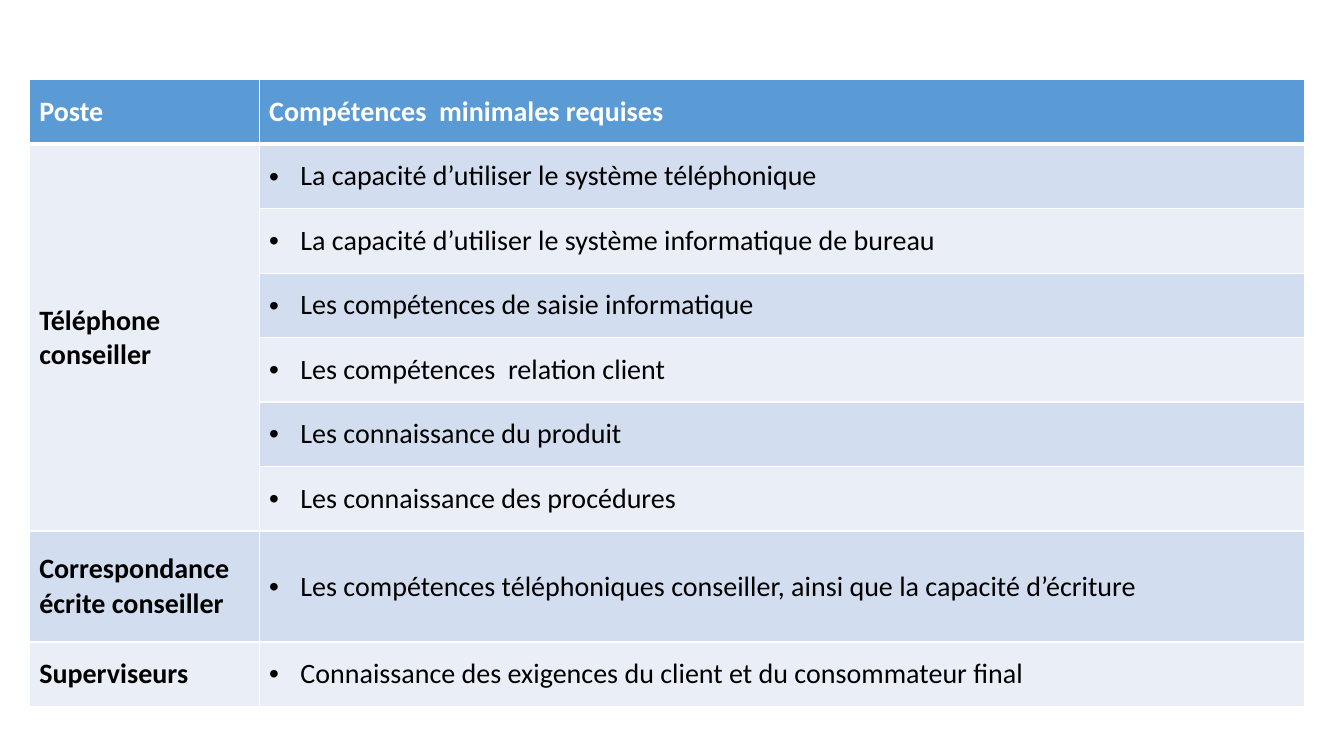
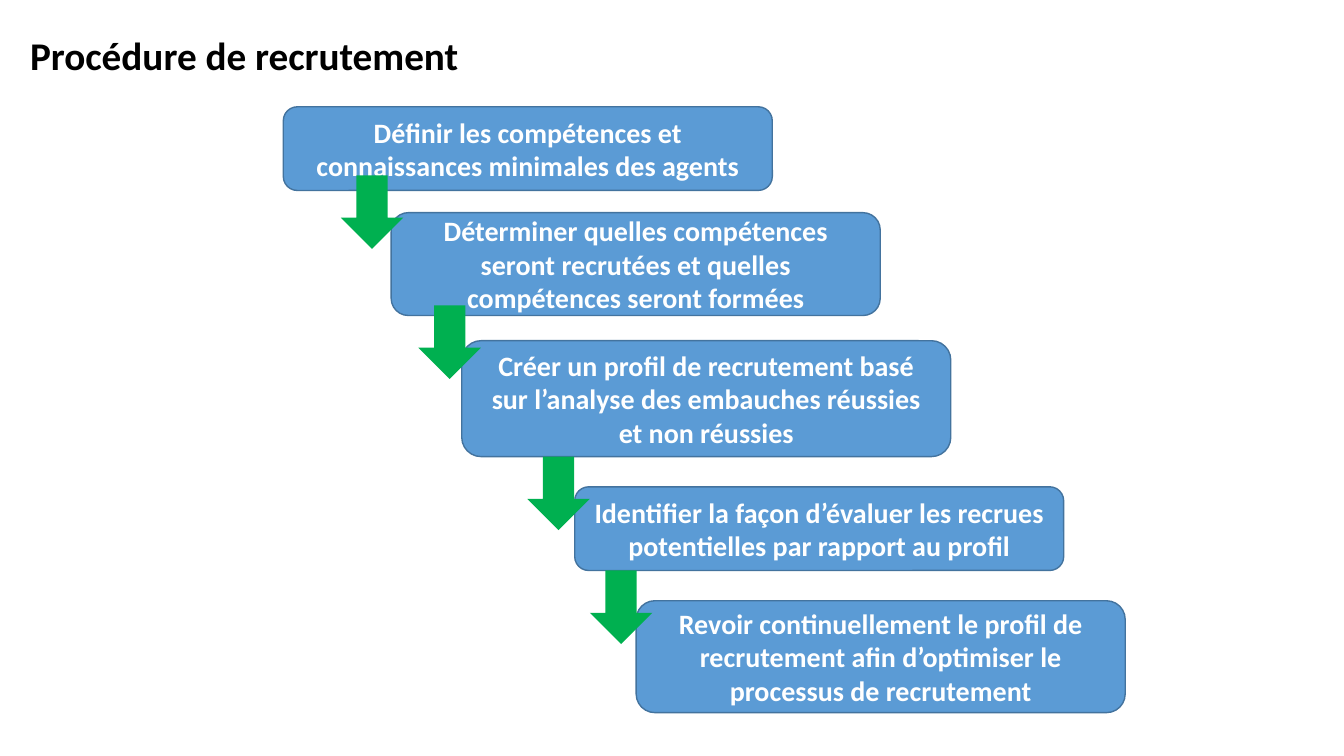
from lxml import etree
from pptx import Presentation
from pptx import util as u
from pptx.dml import color
from pptx.enum import shapes, text
from pptx.oxml import ns

COLORS = {
    "blue": "5B9BD5", "outline": "43739E", "green": "00B050",
    "band_dark": "D2DEEF", "band_light": "EAEFF7",
    "white": "FFFFFF", "black": "000000",
}
TITLE = {"name": "Calibri", "size": u.Pt(28), "bold": True}
STRONG = {"name": "Calibri", "size": u.Pt(20), "bold": True}
BODY = {**STRONG, "bold": False}

# Each post with its required skills
POSTS = [
    ("Téléphone conseiller", [
        "La capacité d’utiliser le système téléphonique",
        "La capacité d’utiliser le système informatique de bureau",
        "Les compétences de saisie informatique",
        "Les compétences  relation client",
        "Les connaissance du produit",
        "Les connaissance des procédures",
    ]),
    ("Correspondance écrite conseiller", [
        "Les compétences téléphoniques conseiller, ainsi que la capacité d’écriture",
    ]),
    ("Superviseurs", [
        "Connaissance des exigences du client et du consommateur final",
    ]),
]

# Steps: left, top, height inside the staircase, text
STEPS = [
    (0, 0, 0.83, "Définir les compétences et connaissances minimales des agents"),
    (1.07, 1.05, 1.02, "Déterminer quelles compétences seront recrutées et quelles "
     "compétences seront formées"),
    (1.77, 2.32, 1.15, "Créer un profil de recrutement basé sur l’analyse des "
     "embauches réussies et non réussies"),
    (2.89, 3.77, 0.83, "Identifier la façon d’évaluer les recrues potentielles "
     "par rapport au profil"),
    (3.5, 4.9, 1.11, "Revoir continuellement le profil de recrutement afin "
     "d’optimiser le processus de recrutement"),
]
# Arrows: left, top inside the staircase
ARROWS = [(0.57, 0.68), (1.34, 1.97), (2.42, 3.47), (3.04, 4.6)]


def rgb(name):
    return color.RGBColor.from_string(COLORS[name])


def inches(*lengths):
    return [u.Inches(length) for length in lengths]


def write(paragraph, words, style, ink):
    run = paragraph.add_run()
    run.text = words
    for key, value in style.items():
        setattr(run.font, key, value)
    run.font.color.rgb = rgb(ink)


def add_bullet(paragraph):
    properties = paragraph._p.get_or_add_pPr()
    indent = u.Inches(0.31)
    properties.set("marL", str(indent))
    properties.set("indent", str(-indent))
    etree.SubElement(properties, ns.qn("a:buFont"), typeface="Arial")
    etree.SubElement(properties, ns.qn("a:buChar"), char="•")


def add_borders(cell, bottom):
    properties = cell._tc.get_or_add_tcPr()
    for side, points in (("L", 1), ("R", 1), ("T", 1), ("B", bottom)):
        line = etree.SubElement(properties, ns.qn("a:ln" + side), w=str(u.Pt(points)))
        fill = etree.SubElement(line, ns.qn("a:solidFill"))
        etree.SubElement(fill, ns.qn("a:srgbClr"), val=COLORS["white"])


def style_cell(cell, fill, bottom=1):
    add_borders(cell, bottom)
    cell.fill.solid()
    cell.fill.fore_color.rgb = rgb(fill)
    cell.vertical_anchor = text.MSO_ANCHOR.MIDDLE
    return cell.text_frame.paragraphs[0]


def add_skills_table(slide, left, top, width):
    row_height, tall_row, first_column = 0.64, 1.1, 2.28
    row_count = 1 + sum(len(skills) for _, skills in POSTS)
    frame = slide.shapes.add_table(
        row_count, 2, *inches(left, top, width, row_height * row_count))
    table = frame.table
    table.columns[0].width, table.columns[1].width = inches(
        first_column, width - first_column)
    for row in table.rows:
        row.height = u.Inches(row_height)

    # Header
    for column, words in enumerate(("Poste", "Compétences  minimales requises")):
        write(style_cell(table.cell(0, column), "blue", 3), words, STRONG, "white")

    # Posts and skills
    row = 1
    for post, skills in POSTS:
        first = row
        post_fill = "band_light" if len(skills) > 1 or first % 2 == 0 else "band_dark"
        for skill in skills:
            post_paragraph = style_cell(table.cell(row, 0), post_fill)
            if row == first:
                write(post_paragraph, post, STRONG, "black")
            paragraph = style_cell(
                table.cell(row, 1), "band_dark" if row % 2 else "band_light")
            add_bullet(paragraph)
            write(paragraph, skill, BODY, "black")
            row += 1
        if len(skills) > 1:
            table.cell(first, 0).merge(table.cell(row - 1, 0))
    table.rows[row_count - 2].height = u.Inches(tall_row)


def add_title(slide, left, top, width, height, words):
    box = slide.shapes.add_textbox(*inches(left, top, width, height))
    box.text_frame.word_wrap = True
    write(box.text_frame.paragraphs[0], words, TITLE, "black")


def add_block(slide, kind, box, fill, outline=None):
    shape = slide.shapes.add_shape(kind, *inches(*box))
    shape.shadow.inherit = False
    shape.fill.solid()
    shape.fill.fore_color.rgb = rgb(fill)
    if outline:
        shape.line.color.rgb = rgb(outline)
        shape.line.width = u.Pt(1)
    else:
        shape.line.fill.background()
    return shape


def add_staircase(slide, left, top):
    kinds = shapes.MSO_SHAPE
    # Steps
    for x, y, height, words in STEPS:
        step = add_block(slide, kinds.ROUNDED_RECTANGLE,
                         (left + x, top + y, 4.85, height), "blue", "outline")
        frame = step.text_frame
        frame.word_wrap = True
        frame.vertical_anchor = text.MSO_ANCHOR.MIDDLE
        paragraph = frame.paragraphs[0]
        paragraph.alignment = text.PP_ALIGN.CENTER
        write(paragraph, words, STRONG, "white")
    # Arrows over the steps
    for x, y in ARROWS:
        add_block(slide, kinds.DOWN_ARROW, (left + x, top + y, 0.62, 0.73), "green")


def main():
    presentation = Presentation()
    presentation.slide_width, presentation.slide_height = inches(13.33, 7.5)
    blank = presentation.slide_layouts[6]

    add_skills_table(presentation.slides.add_slide(blank), 0.29, 0.79, 12.65)

    procedure = presentation.slides.add_slide(blank)
    add_title(procedure, 0.2, 0.26, 6.56, 0.57, "Procédure de recrutement")
    add_staircase(procedure, 2.81, 1.06)

    presentation.save("out.pptx")


if __name__ == "__main__":
    main()
